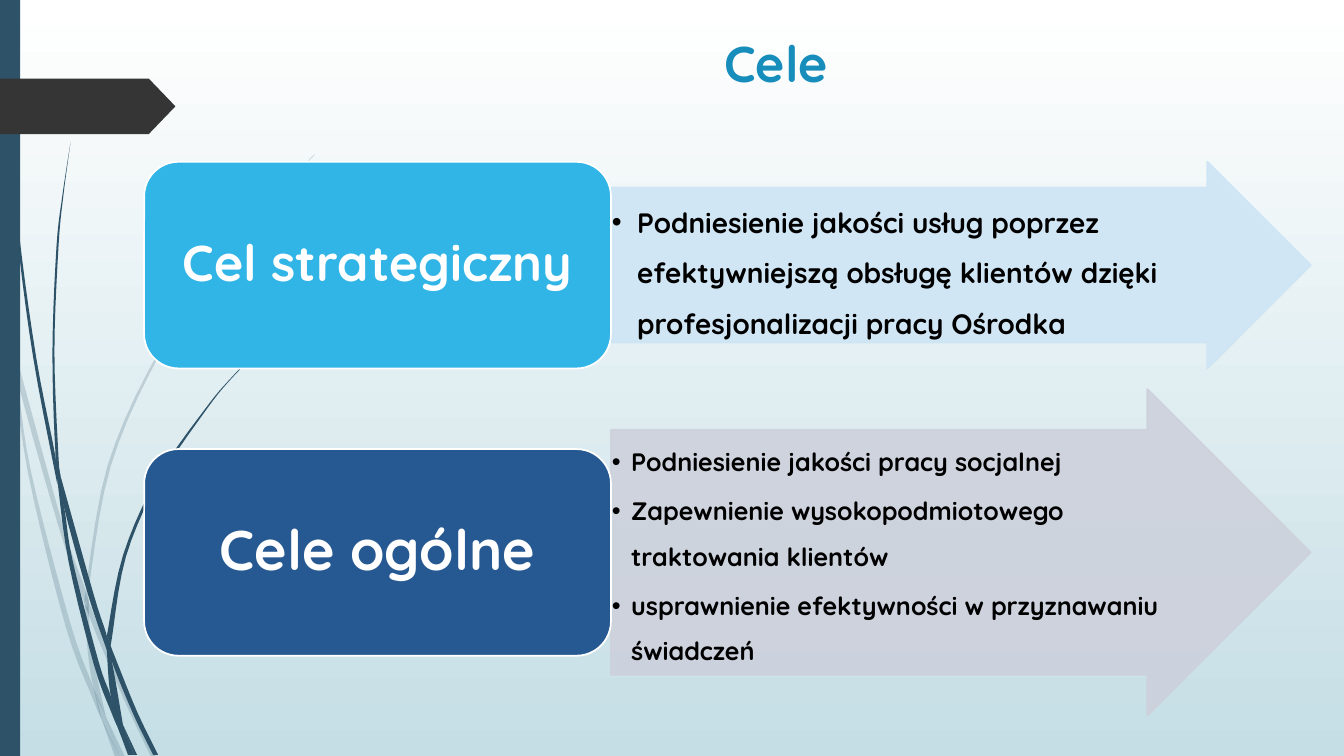
from lxml import etree
from pptx import Presentation
from pptx.dml.color import RGBColor
from pptx.enum.shapes import MSO_SHAPE
from pptx.enum.text import MSO_ANCHOR, MSO_AUTO_SIZE, PP_ALIGN
from pptx.oxml.ns import qn
from pptx.util import Inches, Pt

RECTANGLE = MSO_SHAPE.RECTANGLE
PENTAGON = MSO_SHAPE.PENTAGON
RIGHT_ARROW = MSO_SHAPE.RIGHT_ARROW
ROUNDED = MSO_SHAPE.ROUNDED_RECTANGLE
CENTER = PP_ALIGN.CENTER
TOP, MIDDLE = MSO_ANCHOR.TOP, MSO_ANCHOR.MIDDLE
NO_AUTOFIT = MSO_AUTO_SIZE.NONE
FONT = "Quicksand"
TEAL = "2E5369"


def paint(shape, fill, opacity=100, line=None):
    shape.shadow.inherit = False
    shape.fill.solid()
    shape.fill.fore_color.rgb = RGBColor.from_string(fill)
    if line:
        shape.line.color.rgb = RGBColor.from_string(line)
        shape.line.width = Pt(1.25)
    else:
        shape.line.fill.background()
    if opacity < 100:
        for color in shape._element.spPr.iter(qn("a:srgbClr")):
            etree.SubElement(color, qn("a:alpha")).set("val", str(opacity * 1000))


def smooth(points, steps=5):
    """Return points along a Catmull-Rom curve through the given points."""
    padded = [points[0], *points, points[-1]]
    curve = []
    for a, b, c, d in zip(padded, padded[1:], padded[2:], padded[3:]):
        for step in range(steps):
            t = step / steps
            curve.append(tuple(
                0.5 * (2 * q + (r - p) * t + (2 * p - 5 * q + 4 * r - s) * t ** 2
                       + (3 * q - p - 3 * r + s) * t ** 3)
                for p, q, r, s in zip(a, b, c, d)))
    return curve + [points[-1]]


presentation = Presentation()
presentation.slide_width = Inches(13.33)
presentation.slide_height = Inches(7.5)
slide = presentation.slides.add_slide(presentation.slide_layouts[3])
shapes = slide.shapes
title, *lists = slide.placeholders

background = slide.background.fill
background.gradient()
background.gradient_angle = 270
for stop, color in zip(background.gradient_stops, ("FFFFFF", "C5DEE5")):
    stop.color.rgb = RGBColor.from_string(color)

# Blade pieces: left edge and right edge, each from tip to root
pale_grass = [
    ([(0, 2.99), (0.1, 3.44), (0.11, 3.5)], [(0, 2.82), (0.09, 3.22), (0.11, 3.5)]),
    ([(0.14, 3.45), (0.17, 3.76), (0.58, 5.22), (0.84, 5.99)],
     [(0.14, 3.45), (0.62, 5.2), (0.85, 5.86), (0.84, 5.99)]),
    ([(0.88, 5.96), (0.88, 6.1), (1.23, 6.94), (1.5, 7.51)],
     [(0.88, 5.96), (0.92, 6.07), (1.27, 6.92), (1.55, 7.51)]),
    ([(1.05, 7.11), (1.19, 7.51)], [(1.05, 7.11), (1.24, 7.51)]),
    ([(0.11, 3.5), (0.28, 4.7), (0.65, 6.21), (0.92, 6.93), (1.01, 7.14)],
     [(0.11, 3.5), (0.17, 3.76), (0.31, 4.69), (0.7, 6.19), (0.93, 6.83), (1.01, 7.14)]),
    ([(0.84, 5.99), (0.87, 6.46), (0.93, 6.83), (1.05, 7.11)],
     [(0.84, 5.99), (0.88, 6.08), (0.91, 6.46), (1.05, 7.11)]),
    ([(3.12, 1.53), (2.68, 1.97), (2.28, 2.44), (1.58, 3.48), (1.07, 4.61), (0.85, 5.84)],
     [(3.12, 1.54), (2.68, 1.98), (2.29, 2.45), (1.6, 3.49), (1.1, 4.62), (0.88, 5.84),
      (0.88, 5.96)]),
    ([(1.01, 7.14), (1.14, 7.51)], [(1.01, 7.14), (1.19, 7.51)]),
    ([(0.85, 5.86), (0.84, 5.99), (0.88, 6.1)], [(0.85, 5.86), (0.88, 5.96), (0.88, 6.1)]),
    ([(0.93, 6.83), (1.01, 7.14), (1.19, 7.51)], [(0.93, 6.83), (1.05, 7.11), (1.19, 7.51)]),
]
dark_grass = [
    ([(0.03, 0), (0.07, 1.1), (0.17, 2.33), (0.33, 3.55), (0.57, 4.81)],
     [(0.04, 0), (0.08, 1.09), (0.19, 2.32), (0.36, 3.55), (0.55, 4.53), (0.57, 4.81)]),
    ([(0.6, 4.72), (0.64, 5.05), (0.88, 5.92), (1.06, 6.45)],
     [(0.6, 4.72), (0.93, 5.9), (1.06, 6.31), (1.06, 6.45)]),
    ([(1.1, 6.41), (1.11, 6.56), (1.32, 7.08), (1.52, 7.49)],
     [(1.1, 6.41), (1.13, 6.49), (1.36, 7.06), (1.57, 7.49)]),
    ([(0.57, 4.77), (0.68, 5.57), (0.93, 6.59), (1.11, 7.08), (1.17, 7.22)],
     [(0.57, 4.77), (0.64, 5.05), (0.72, 5.56), (0.98, 6.57), (1.1, 6.91), (1.17, 7.22)]),
    ([(0.7, 1.41), (0.62, 1.93), (0.56, 2.45), (0.52, 3.49), (0.55, 4.49), (0.6, 4.72)],
     [(0.7, 1.41), (0.63, 1.93), (0.58, 2.45), (0.54, 3.49), (0.58, 4.53), (0.6, 4.72)]),
    ([(1.22, 7.19), (1.33, 7.49)], [(1.22, 7.19), (1.36, 7.49)]),
    ([(0.55, 4.49), (0.57, 4.77), (0.64, 5.05)], [(0.55, 4.49), (0.6, 4.72), (0.64, 5.05)]),
    ([(2.6, 3.44), (2.31, 3.73), (2.04, 4.05), (1.56, 4.74), (1.22, 5.51), (1.06, 6.31)],
     [(2.61, 3.44), (2.31, 3.74), (2.05, 4.06), (1.58, 4.76), (1.25, 5.52), (1.11, 6.33),
      (1.1, 6.41)]),
    ([(1.17, 7.22), (1.27, 7.49)], [(1.17, 7.22), (1.31, 7.49)]),
    ([(1.06, 6.45), (1.1, 6.91), (1.22, 7.19)], [(1.06, 6.45), (1.11, 6.56), (1.22, 7.19)]),
    ([(1.06, 6.31), (1.06, 6.45), (1.11, 6.56)], [(1.06, 6.31), (1.1, 6.41), (1.11, 6.56)]),
    ([(1.1, 6.91), (1.17, 7.22), (1.3, 7.49)], [(1.1, 6.91), (1.22, 7.19), (1.33, 7.49)]),
]
for opacity, pieces in ((20, pale_grass), (100, dark_grass)):
    for left_edge, right_edge in pieces:
        outline = [(Inches(x), Inches(y))
                   for x, y in smooth(left_edge) + smooth(right_edge)[::-1]]
        builder = shapes.build_freeform(*outline[0])
        builder.add_line_segments(outline[1:])
        paint(builder.convert_to_shape(), TEAL, opacity)

side_bar = shapes.add_shape(RECTANGLE, 0, 0, Inches(0.2), Inches(7.5))
paint(side_bar, TEAL)
tag = shapes.add_shape(PENTAGON, 0, Inches(0.78), Inches(1.74), Inches(0.55))
tag.adjustments[0] = 0.48
paint(tag, "353535")

title.left, title.top = Inches(2.82), Inches(0.27)
title.width, title.height = Inches(9.75), Inches(0.92)
title.text = "Cele"
title.text_frame.vertical_anchor = TOP
title.text_frame.auto_size = NO_AUTOFIT
heading = title.text_frame.paragraphs[0]
heading.alignment = CENTER
heading.font.name, heading.font.size, heading.font.bold = FONT, Pt(36), True
heading.font.color.rgb = RGBColor.from_string("178DBB")

# Label, its size and fill; arrow centre, height and fill; list box, size, indent and items
goals = [
    ("Cel strategiczny", 36, "31B4E6", 2.63, 2.05, "CEE5F5", (1.86, 6.17, 1.54), 20, 0.25,
     ["Podniesienie jakości usług poprzez efektywniejszą obsługę klientów dzięki "
      "profesjonalizacji pracy Ośrodka"]),
    ("Cele ogólne", 40, "265991", 5.48, 3.24, "CDD1DC", (4.27, 5.72, 2.43), 18, 0.19,
     ["Podniesienie jakości pracy socjalnej",
      "Zapewnienie wysokopodmiotowego traktowania klientów",
      "usprawnienie efektywności w przyznawaniu świadczeń"]),
]
for goal, goal_list in zip(goals, lists):
    (label, label_size, label_fill, middle, arrow_height, arrow_fill,
     (list_top, list_width, list_height), list_size, indent, items) = goal

    arrow = shapes.add_shape(RIGHT_ARROW, Inches(6.06), Inches(middle - arrow_height / 2),
                             Inches(6.94), Inches(arrow_height))
    arrow.adjustments[0] = 0.75
    paint(arrow, arrow_fill, 90, arrow_fill)

    shapes._spTree.append(goal_list._element)  # in front of its arrow
    goal_list.left, goal_list.top = Inches(6.06), Inches(list_top)
    goal_list.width, goal_list.height = Inches(list_width), Inches(list_height)
    frame = goal_list.text_frame
    frame.text = "\n".join(items)
    frame.auto_size = NO_AUTOFIT
    frame.margin_left = frame.margin_right = Inches(0.01)
    frame.margin_top = frame.margin_bottom = Inches(0.01)
    for paragraph in frame.paragraphs:
        paragraph.line_spacing = 1.5
        paragraph.space_before, paragraph.space_after = Pt(0), Pt(2.7)
        paragraph.font.name, paragraph.font.size = FONT, Pt(list_size)
        paragraph.font.bold = True
        paragraph.font.color.rgb = RGBColor.from_string("000000")
        properties = paragraph._p.get_or_add_pPr()
        properties.set("marL", str(Inches(indent)))
        properties.set("indent", str(-Inches(indent)))

    box = shapes.add_shape(ROUNDED, Inches(1.43), Inches(middle - 1.025),
                           Inches(4.63), Inches(2.05))
    paint(box, label_fill, line="FFFFFF")
    box.text_frame.text = label
    box.text_frame.word_wrap = True
    box.text_frame.vertical_anchor = MIDDLE
    caption = box.text_frame.paragraphs[0]
    caption.alignment = CENTER
    caption.line_spacing = 0.9
    caption.font.name, caption.font.size, caption.font.bold = FONT, Pt(label_size), True
    caption.font.color.rgb = RGBColor.from_string("FFFFFF")

presentation.save("out.pptx")
